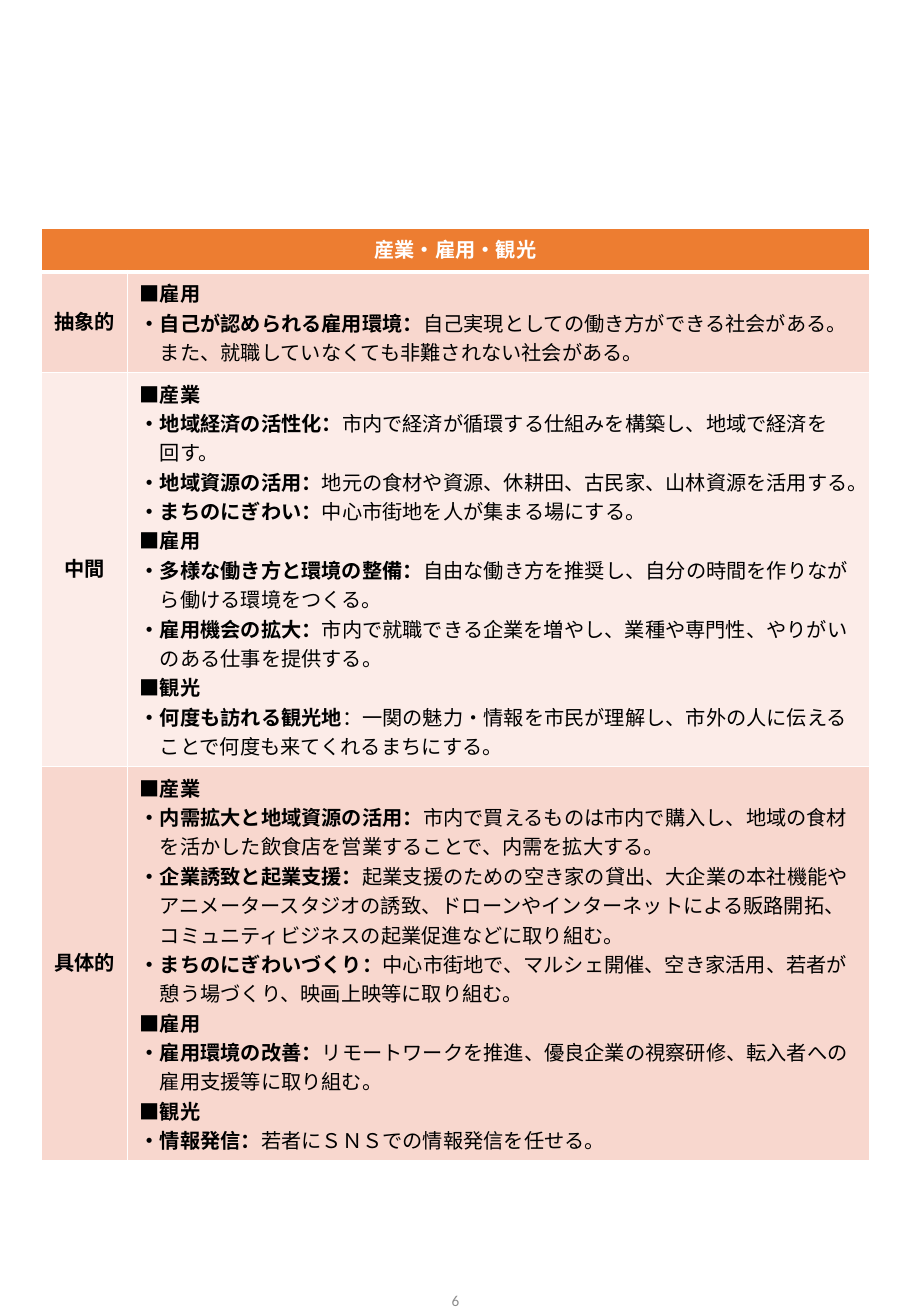
import pptx
import pptx.dml.color
import pptx.enum.text
import pptx.oxml
import pptx.oxml.ns
import pptx.util

RGBColor = pptx.dml.color.RGBColor
PP_ALIGN = pptx.enum.text.PP_ALIGN
MSO_ANCHOR = pptx.enum.text.MSO_ANCHOR
Inches, Pt = pptx.util.Inches, pptx.util.Pt

ORANGE = RGBColor(0xED, 0x7D, 0x31)
PEACH = RGBColor(0xF8, 0xD7, 0xCE)
PALE = RGBColor(0xFC, 0xEC, 0xE8)
WHITE = RGBColor(0xFF, 0xFF, 0xFF)
BLACK = RGBColor(0, 0, 0)
GREY = RGBColor(0x8C, 0x8C, 0x8C)
LATIN, JAPANESE = "Calibri", "Noto Sans CJK JP"

# A plain string is a heading; a pair is a bold lead and its text.
LEVELS = [
    ("抽象的", PEACH, 0.82, [
        "■雇用",
        ("・自己が認められる雇用環境：",
         "自己実現としての働き方ができる社会がある。\n"
         "また、就職していなくても非難されない社会がある。"),
    ]),
    ("中間", PALE, 3.24, [
        "■産業",
        ("・地域経済の活性化：", "市内で経済が循環する仕組みを構築し、地域で経済を\n回す。"),
        ("・地域資源の活用：", "地元の食材や資源、休耕田、古民家、山林資源を活用する。"),
        ("・まちのにぎわい：", "中心市街地を人が集まる場にする。"),
        "■雇用",
        ("・多様な働き方と環境の整備：",
         "自由な働き方を推奨し、自分の時間を作りなが\nら働ける環境をつくる。"),
        ("・雇用機会の拡大：",
         "市内で就職できる企業を増やし、業種や専門性、やりがい\nのある仕事を提供する。"),
        "■観光",
        ("・何度も訪れる観光地",
         "：一関の魅力・情報を市民が理解し、市外の人に伝える\n"
         "ことで何度も来てくれるまちにする。"),
    ]),
    ("具体的", PEACH, 3.24, [
        "■産業",
        ("・内需拡大と地域資源の活用：",
         "市内で買えるものは市内で購入し、地域の食材\n"
         "を活かした飲食店を営業することで、内需を拡大する。"),
        ("・企業誘致と起業支援：",
         "起業支援のための空き家の貸出、大企業の本社機能や\n"
         "アニメータースタジオの誘致、ドローンやインターネットによる販路開拓、\n"
         "コミュニティビジネスの起業促進などに取り組む。"),
        ("・まちのにぎわいづくり：",
         "中心市街地で、マルシェ開催、空き家活用、若者が\n"
         "憩う場づくり、映画上映等に取り組む。"),
        "■雇用",
        ("・雇用環境の改善：",
         "リモートワークを推進、優良企業の視察研修、転入者への\n雇用支援等に取り組む。"),
        "■観光",
        ("・情報発信：", "若者にＳＮＳでの情報発信を任せる。"),
    ]),
]


def add_text(p, text, size=12, font=LATIN, color=BLACK, bold=True, align=PP_ALIGN.CENTER):
    """Add text to a paragraph, with a line break at each newline."""
    p.alignment = align
    for i, line in enumerate(text.split("\n")):
        if i:
            p.add_line_break()
        r = p.add_run()
        r.text = line
        r.font.name, r.font.size, r.font.bold = font, Pt(size), bold
        r.font.color.rgb = color
        ea = pptx.oxml.parse_xml(f'<a:ea {pptx.oxml.ns.nsdecls("a")} typeface="{font}"/>')
        r.font._element.find(pptx.oxml.ns.qn("a:latin")).addnext(ea)


def style_cell(cell, fill, bottom=1):
    """Fill a cell and give it white borders."""
    cell.vertical_anchor = MSO_ANCHOR.MIDDLE
    tc_pr = cell._tc.get_or_add_tcPr()
    for side, width in (("L", 1), ("R", 1), ("T", 1), ("B", bottom)):
        tc_pr.append(pptx.oxml.parse_xml(
            f'<a:ln{side} {pptx.oxml.ns.nsdecls("a")} w="{Pt(width)}"><a:solidFill>'
            f'<a:srgbClr val="{WHITE}"/></a:solidFill></a:ln{side}>'))
    cell.fill.solid()
    cell.fill.fore_color.rgb = fill


prs = pptx.Presentation()
prs.slide_width, prs.slide_height = Inches(7.5), Inches(10.83)
s = prs.slides.add_slide(prs.slide_layouts[6])

heights = [0.36] + [height for _, _, height, _ in LEVELS]
table = s.shapes.add_table(len(heights), 2, Inches(0.34), Inches(1.88),
                           Inches(6.82), Inches(sum(heights))).table
table.horz_banding = False
for column, width in zip(table.columns, (0.71, 6.11)):
    column.width = Inches(width)
for row, height in zip(table.rows, heights):
    row.height = Inches(height)

for cell in table.rows[0].cells:
    style_cell(cell, ORANGE, bottom=3)
header = table.cell(0, 0)
header.merge(table.cell(0, 1))
add_text(header.text_frame.paragraphs[0], "産業・雇用・観光", color=WHITE)

for row, (level, fill, _, items) in enumerate(LEVELS, 1):
    label, body = table.cell(row, 0), table.cell(row, 1)
    style_cell(label, fill)
    style_cell(body, fill)
    add_text(label.text_frame.paragraphs[0], level)
    tf = body.text_frame
    for i, item in enumerate(items):
        p = tf.add_paragraph() if i else tf.paragraphs[0]
        lead, detail = (item, "") if isinstance(item, str) else item
        add_text(p, lead, font=JAPANESE, align=PP_ALIGN.LEFT)
        if detail:
            add_text(p, detail, font=JAPANESE, bold=False, align=PP_ALIGN.LEFT)
            p_pr = p._p.get_or_add_pPr()
            p_pr.set("marL", str(Pt(12)))
            p_pr.set("indent", str(-Pt(12)))

number_height = Inches(0.34)
sp = s.shapes.add_textbox(0, prs.slide_height - number_height, prs.slide_width, number_height)
tf = sp.text_frame
tf.word_wrap = True
tf.vertical_anchor = MSO_ANCHOR.BOTTOM
add_text(tf.paragraphs[0], "6", size=9, color=GREY, bold=False)

prs.save("out.pptx")
